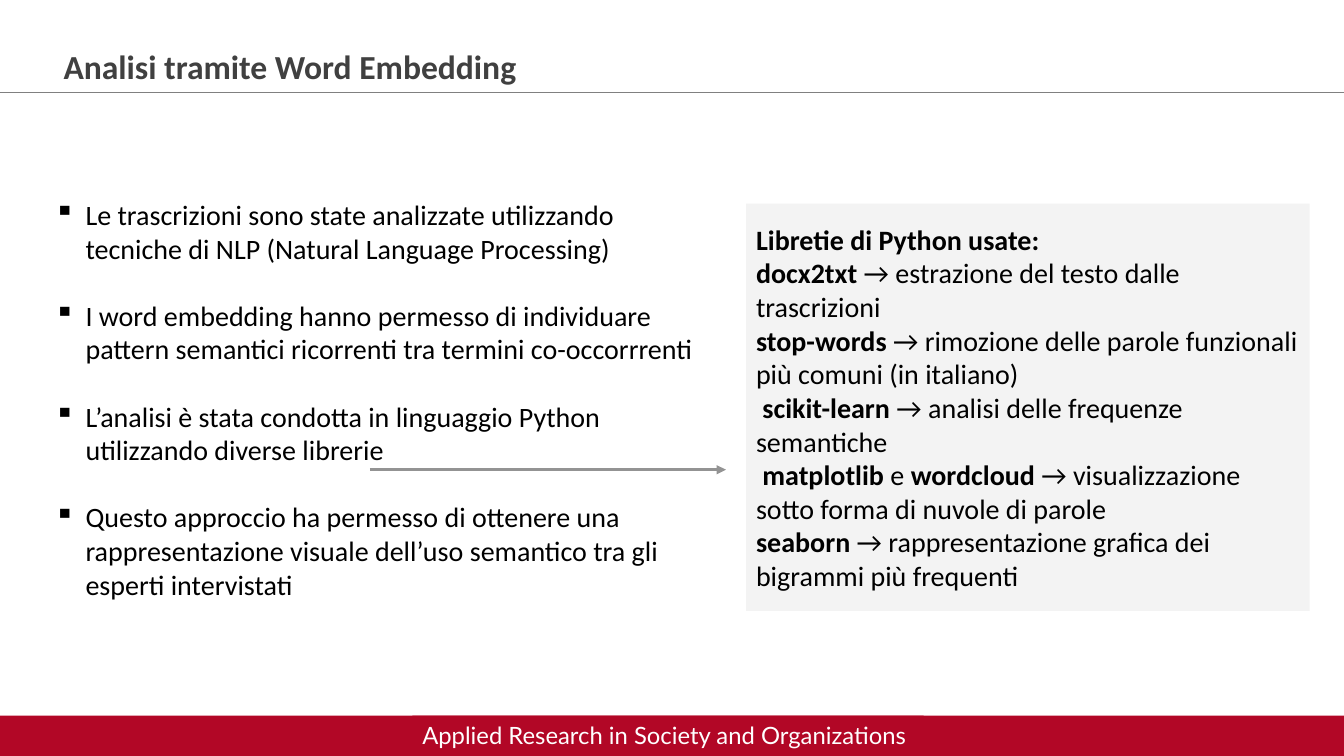
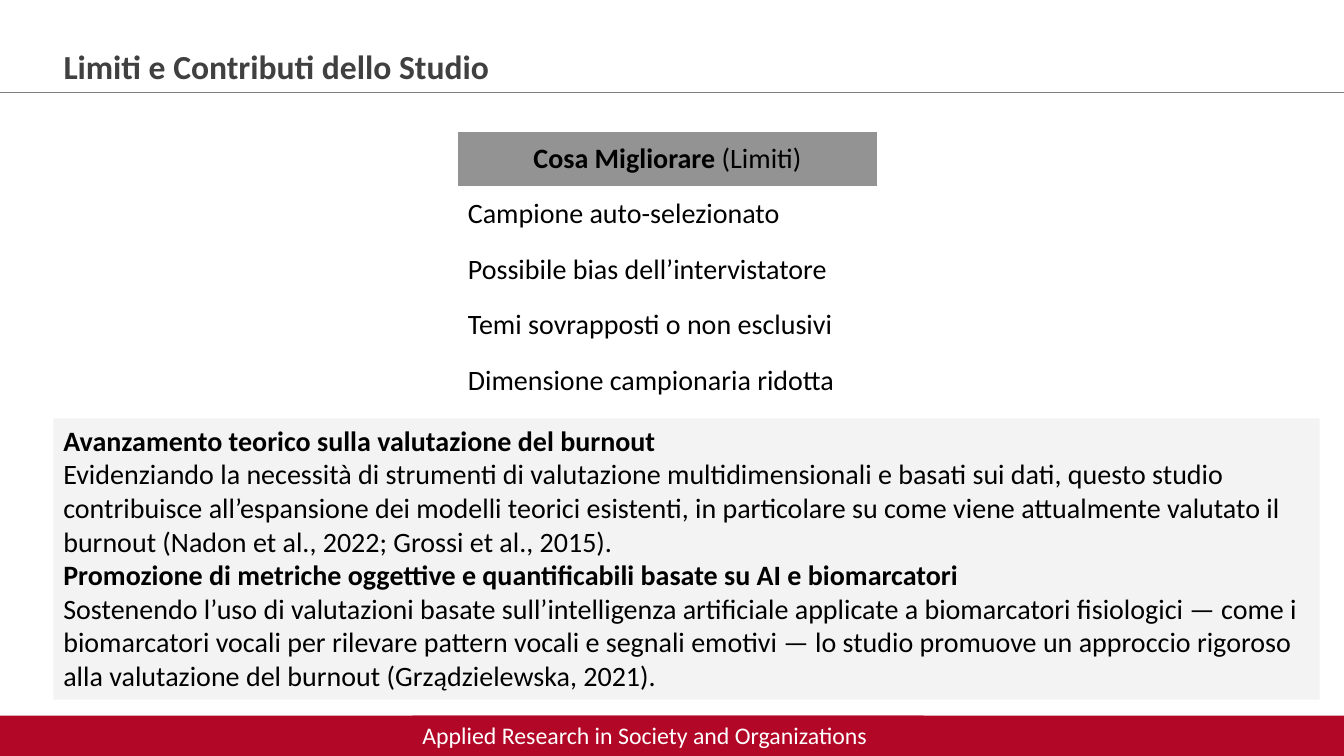
from pptx import Presentation
from pptx.dml.color import RGBColor
from pptx.enum import shapes, text
from pptx.oxml.ns import qn
from pptx.util import Inches, Pt
from lxml import etree

# Text between ** marks is bold.
FOOTER = "Applied Research in Society and Organizations"
RED, GREY, PALE, DARK = "B20726", "939393", "F3F3F3", "404040"
WIDTH, HEIGHT, BAND = 13.33, 7.5, 0.4

POINTS = [
    "Le trascrizioni sono state analizzate utilizzando tecniche di NLP (Natural Language Processing)",
    "I word embedding hanno permesso di individuare pattern semantici ricorrenti tra termini co-occorrrenti",
    "L’analisi è stata condotta in linguaggio Python utilizzando diverse librerie",
    "Questo approccio ha permesso di ottenere una rappresentazione visuale dell’uso semantico tra gli esperti intervistati",
]
LIBRARIES = [
    "**Libretie di Python usate:**",
    "**docx2txt** → estrazione del testo dalle trascrizioni",
    "**stop-words** → rimozione delle parole funzionali più comuni (in italiano)",
    " **scikit-learn** → analisi delle frequenze semantiche",
    " **matplotlib** e **wordcloud** → visualizzazione sotto forma di nuvole di parole",
    "**seaborn** → rappresentazione grafica dei bigrammi più frequenti",
]
LIMITS = [
    "**Cosa Migliorare** (Limiti)",
    "Campione auto-selezionato",
    "Possibile bias dell’intervistatore",
    "Temi sovrapposti o non esclusivi",
    "Dimensione campionaria ridotta",
]
GAINS = [
    "**Avanzamento teorico sulla valutazione del burnout**",
    "Evidenziando la necessità di strumenti di valutazione multidimensionali e basati sui dati, "
    "questo studio contribuisce all’espansione dei modelli teorici esistenti, in particolare su "
    "come viene attualmente valutato il burnout (Nadon et al., 2022; Grossi et al., 2015).",
    "**Promozione di metriche oggettive e quantificabili basate su AI e biomarcatori**",
    "Sostenendo l’uso di valutazioni basate sull’intelligenza artificiale applicate a biomarcatori "
    "fisiologici — come i biomarcatori vocali per rilevare pattern vocali e segnali emotivi — lo "
    "studio promuove un approccio rigoroso alla valutazione del burnout (Grządzielewska, 2021).",
]


def color(code):
    return RGBColor.from_string(code)


def write(frame, lines, size=20, ink="000000", font="Calibri", align="LEFT",
          anchor="TOP", bullet=None, gap=0):
    frame.word_wrap = True
    frame.auto_size = text.MSO_AUTO_SIZE.NONE
    frame.vertical_anchor = text.MSO_ANCHOR[anchor]
    fill_text(frame, lines, size, ink, font, align, bullet, gap)


def fill_text(frame, lines, size=20, ink="000000", font="Calibri", align="LEFT",
              bullet=None, gap=0):
    for i, line in enumerate(lines):
        para = frame.add_paragraph() if i else frame.paragraphs[0]
        para.alignment = text.PP_ALIGN[align]
        para.space_before = Pt(gap if i else 0)
        if bullet:
            props = para._p.get_or_add_pPr()
            props.set("marL", str(Inches(0.31)))
            props.set("indent", str(-Inches(0.31)))
            etree.SubElement(props, qn("a:buChar")).set("char", bullet)
        para.font.size, para.font.name = Pt(size), font
        para.font.color.rgb = color(ink)
        for j, part in enumerate(line.split("**")):
            if part:
                run = para.add_run()
                run.text, run.font.bold = part, j % 2 == 1


def add_box(slide, area, fill):
    box = slide.shapes.add_shape(shapes.MSO_SHAPE.RECTANGLE, *map(Inches, area))
    box.shadow.inherit = False
    box.fill.solid()
    box.fill.fore_color.rgb = color(fill)
    box.line.fill.background()
    return box


def add_line(slide, start, end, ink, width, arrow=False):
    line = slide.shapes.add_connector(
        shapes.MSO_CONNECTOR.STRAIGHT, *map(Inches, start + end))
    line.line.color.rgb, line.line.width = color(ink), Pt(width)
    props = line.element.spPr
    if arrow:
        etree.SubElement(props.find(qn("a:ln")), qn("a:tailEnd")).set("type", "triangle")
    etree.SubElement(props, qn("a:effectLst"))


def add_slide(deck, title, font):
    """Start a slide with its title, rule and footer band."""
    slide = deck.slides.add_slide(deck.slide_layouts[5])
    add_line(slide, (0, 0.91), (WIDTH, 0.91), "808080", 0.25)
    add_box(slide, (0, HEIGHT - BAND, WIDTH, BAND), RED)
    label = add_box(slide, (4.09, HEIGHT - BAND, 5.07, 0.39), RED)
    write(label.text_frame, [FOOTER], 17, "FFFFFF", font)
    head = slide.shapes.title
    head.left, head.top, head.width, head.height = map(Inches, (0.53, 0.41, 11.5, 0.5))
    write(head.text_frame, [f"**{title}**"], 24, DARK)
    return slide


def add_limits(slide):
    left, top, width, row = 4.54, 1.3, 4.16, 0.55
    table = slide.shapes.add_table(
        len(LIMITS), 1, *map(Inches, (left, top, width, row * len(LIMITS)))).table
    table.first_row = table.horz_banding = False
    for i, limit in enumerate(LIMITS):
        cell = table.cell(i, 0)
        cell.vertical_anchor = text.MSO_ANCHOR.MIDDLE
        if i:
            cell.fill.background()
        else:
            cell.fill.solid()
            cell.fill.fore_color.rgb = color(GREY)
        fill_text(cell.text_frame, [limit], align="LEFT" if i else "CENTER")


def main():
    deck = Presentation()
    deck.slide_width, deck.slide_height = Inches(WIDTH), Inches(HEIGHT)

    slide = add_slide(deck, "Analisi tramite Word Embedding", "Lato")
    points = slide.shapes.add_textbox(*map(Inches, (0.44, 1.91, 6.68, 4.14)))
    write(points.text_frame, POINTS, bullet="▪", gap=24)
    box = add_box(slide, (7.4, 2.02, 5.59, 4.04), PALE)
    write(box.text_frame, LIBRARIES, anchor="MIDDLE")
    add_line(slide, (3.67, 4.66), (7.2, 4.66), GREY, 2.25, arrow=True)

    slide = add_slide(deck, "Limiti e Contributi dello Studio", "Calibri")
    add_limits(slide)
    box = add_box(slide, (0.53, 4.15, 12.56, 2.79), PALE)
    write(box.text_frame, GAINS)

    deck.save("out.pptx")


if __name__ == "__main__":
    main()
